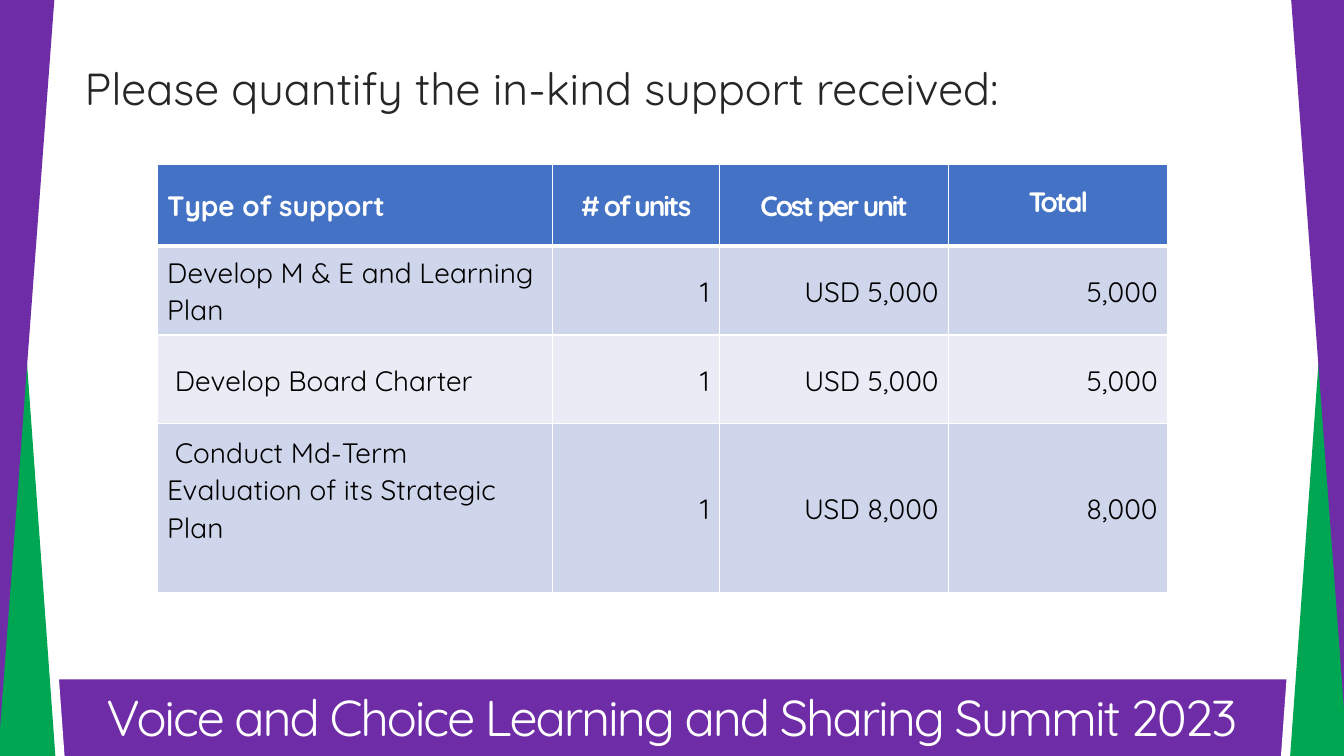
from dataclasses import dataclass
from lxml.etree import SubElement as Sub
from pptx import Presentation
from pptx.dml.color import RGBColor as RGB
from pptx.enum.shapes import MSO_SHAPE as Kind
from pptx.enum.text import MSO_ANCHOR as Anchor, MSO_AUTO_SIZE as Auto, PP_ALIGN as Align
from pptx.oxml.ns import qn
from pptx.util import Cm, Pt


@dataclass(frozen=True)
class Theme:
    font: str = "Quicksand"
    white: str = "FFFFFF"
    black: str = "000000"
    ink: str = "262626"
    violet: str = "6F2CA7"
    green: str = "00A651"
    blue: str = "4472C4"
    dark: str = "CFD5EA"
    light: str = "E9EBF5"
    title: int = 32
    foot: int = 36
    body: int = 20


theme = Theme()


def paint(shape, color):
    shape.shadow.inherit = False
    shape.fill.solid()
    shape.fill.fore_color.rgb = RGB.from_string(color)
    shape.line.fill.background()


def write(frame, text, size, color, align, space, bold=False, tight=False):
    frame.text = text
    para = frame.paragraphs[0]
    para.alignment = align
    para.line_spacing = space
    run = para.runs[0]
    run.font.name = theme.font
    run.font.size = Pt(size)
    run.font.bold = bold
    run.font.color.rgb = RGB.from_string(color)
    if tight:
        run.font._element.set("spc", "-150")


deck = Presentation()
deck.slide_width, deck.slide_height = Cm(33.87), Cm(19.05)
slide = deck.slides.add_slide(deck.slide_layouts[5])
shapes = slide.shapes

band = shapes.add_shape(Kind.RECTANGLE, Cm(-0.05), Cm(17.12), Cm(33.99), Cm(2.06))
paint(band, theme.violet)

wedges = [
    (theme.white, [(1.63, 19.08), (0.23, 19.08), (0.18, 0), (0.25, 0.08)]),
    (theme.green, [(1.4, 19.1), (0, 19.1), (-0.05, 0), (0.03, 0.13)]),
    (theme.violet, [(0, 0), (1.37, 0), (-0.05, 19.05), (0, 19.05)]),
]
for color, spots in wedges:
    for base, sign in ((0, 1), (33.91, -1)):
        dots = [(Cm(base + sign * x), Cm(y)) for x, y in spots]
        path = shapes.build_freeform(*dots[0])
        path.add_line_segments(dots[1:], close=True)
        paint(path.convert_to_shape(), color)

title = shapes.title
title.left, title.top, title.width, title.height = Cm(1.88), Cm(1.4), Cm(28.5), Cm(1.63)
write(title.text_frame, "Please quantify the in-kind support received:",
      theme.title, theme.ink, Align.LEFT, 1.0)
title.text_frame.auto_size = Auto.SHAPE_TO_FIT_TEXT

foot = shapes.add_textbox(0, Cm(17.53), Cm(33.87), Cm(1.42)).text_frame
foot.word_wrap = True
foot.auto_size = Auto.SHAPE_TO_FIT_TEXT
write(foot, "Voice and Choice Learning and Sharing Summit 2023",
      theme.foot, theme.white, Align.CENTER, Pt(33), tight=True)

rows = [
    ("Type of support", "# of units", "Cost per unit", "Total"),
    ("Develop M & E and Learning Plan", "1", "USD 5,000", "5,000"),
    (" Develop Board Charter", "1", "USD 5,000", "5,000"),
    (" Conduct Md-Term Evaluation of its Strategic Plan", " 1", " USD 8,000", "8,000"),
]
wides = [9.97, 4.2, 5.78, 5.52]
highs = [2.06, 2.24, 2.24, 4.24]
grid = shapes.add_table(len(rows), len(wides), Cm(3.96), Cm(4.14),
                        Cm(sum(wides)), Cm(sum(highs))).table
for col, wide in zip(grid.columns, wides):
    col.width = Cm(wide)
for row, high in zip(grid.rows, highs):
    row.height = Cm(high)

for r, row in enumerate(rows):
    head = r == 0
    fill = theme.blue if head else theme.dark if r % 2 else theme.light
    for c, text in enumerate(row):
        cell = grid.cell(r, c)
        cell.vertical_anchor = Anchor.MIDDLE
        props = cell._tc.get_or_add_tcPr()
        for side in "LRTB":
            thick = (r, side) in ((0, "B"), (1, "T"))
            line = Sub(props, qn("a:ln" + side), w=str(Pt(3 if thick else 1)))
            Sub(Sub(line, qn("a:solidFill")), qn("a:srgbClr"), val=theme.white)
        cell.fill.solid()
        cell.fill.fore_color.rgb = RGB.from_string(fill)
        align = Align.LEFT if c == 0 else Align.CENTER if head else Align.RIGHT
        space = Pt(21) if text == "Total" else 1.07
        write(cell.text_frame, text, theme.body, theme.white if head else theme.black,
              align, space, bold=head, tight=head and c > 0)
grid.cell(3, 0).margin_bottom = Cm(1.07)

deck.save("out.pptx")
